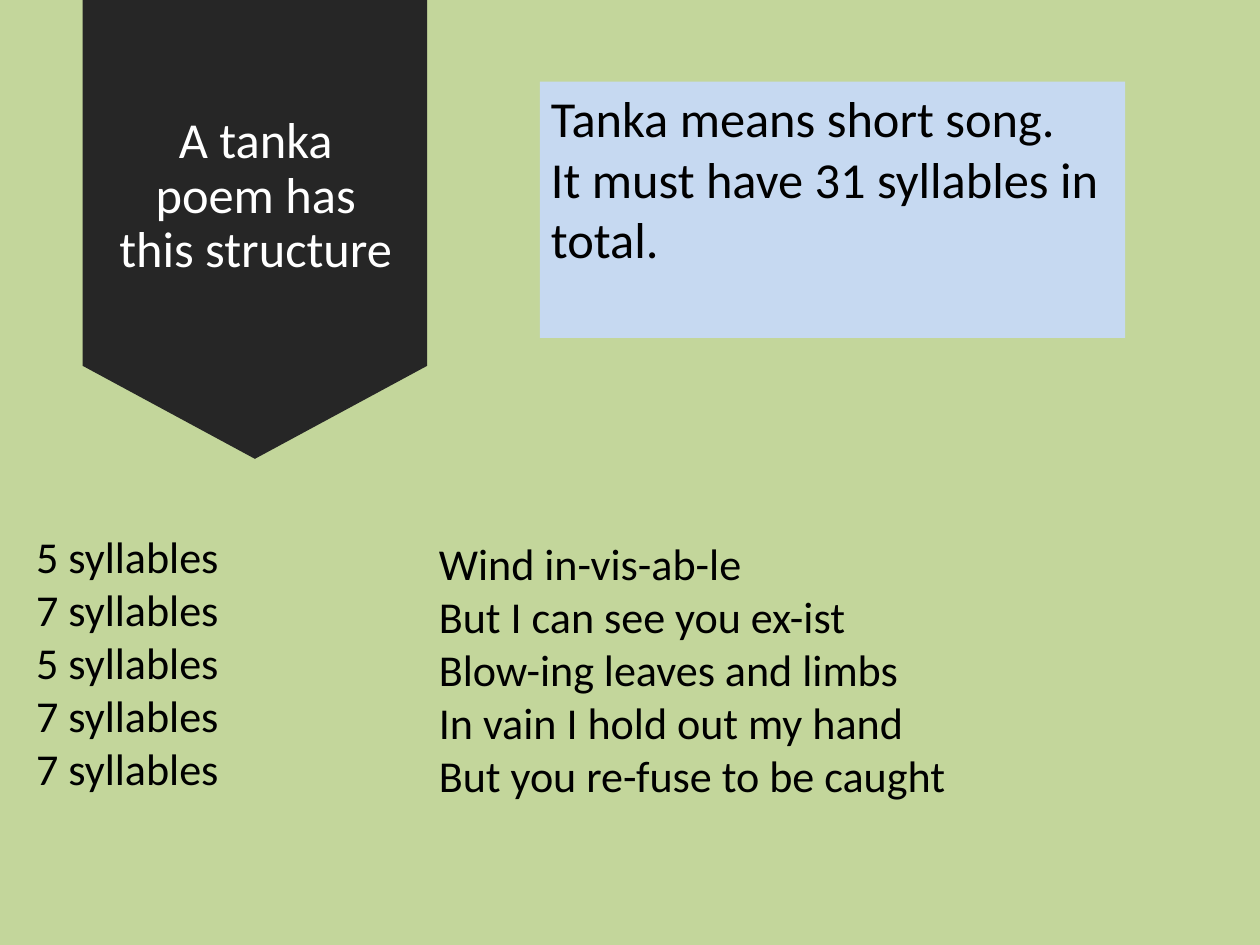
from pptx import Presentation
from pptx import util as u
from pptx.dml import color
from pptx.enum import shapes, text

FONT = "Calibri"
GREEN, DARK, BLUE = "C3D69B", "262626", "C6D9F1"
BLACK, WHITE = "000000", "FFFFFF"

TITLE = ["A tanka poem has this structure"]
FACTS = ["Tanka means short song.", "It must have 31 syllables in total."]
POEM = [
    (5, "Wind in-vis-ab-le"),
    (7, "But I can see you ex-ist"),
    (5, "Blow-ing leaves and limbs"),
    (7, "In vain I hold out my hand"),
    (7, "But you re-fuse to be caught"),
]

ARROW = (1.85, -0.03, 7.72, 10.31)
HEAD = (2.39, 0.58, 6.68, 7.67)
CARD = (12.09, 1.83, 13.11, 5.74)
COUNTS = (0.56, 11.73, 8.51, 6.25)
VERSE = (9.58, 11.89, 18.49, 6.25)


def paint(fill, tone):
    fill.solid()
    fill.fore_color.rgb = color.RGBColor.from_string(tone)


def block(kind, box, tone):
    shape = slide.shapes.add_shape(kind, *map(u.Cm, box))
    shape.shadow.inherit = False
    paint(shape.fill, tone)
    shape.line.fill.background()
    return shape


def write(lines, box=None, shape=None, size=28, tone=BLACK,
          align=text.PP_ALIGN.LEFT, anchor=text.MSO_ANCHOR.TOP,
          space=None, after=0):
    shape = shape or slide.shapes.add_textbox(*map(u.Cm, box))
    frame = shape.text_frame
    frame.word_wrap = True
    frame.vertical_anchor = anchor
    frame.text = "\n".join(lines)
    for para in frame.paragraphs:
        para.alignment = align
        para.line_spacing = space
        para.space_after = u.Pt(after)
        para.font.name = FONT
        para.font.size = u.Pt(size)
        paint(para.font.fill, tone)


deck = Presentation()
deck.slide_width, deck.slide_height = u.Cm(28.22), u.Cm(21.17)
slide = deck.slides.add_slide(deck.slide_layouts[6])
paint(slide.background.fill, GREEN)

arrow = block(shapes.MSO_SHAPE.DOWN_ARROW, ARROW, DARK)
arrow.adjustments[0] = 1
arrow.adjustments[1] = 0.27
write(TITLE, HEAD, size=32, tone=WHITE, align=text.PP_ALIGN.CENTER,
      anchor=text.MSO_ANCHOR.MIDDLE, space=0.9, after=6)

write([f"{count} syllables" for count, line in POEM], COUNTS)
write([line for count, line in POEM], VERSE)

card = block(shapes.MSO_SHAPE.RECTANGLE, CARD, BLUE)
write(FACTS, shape=card, size=32)

deck.save("out.pptx")
